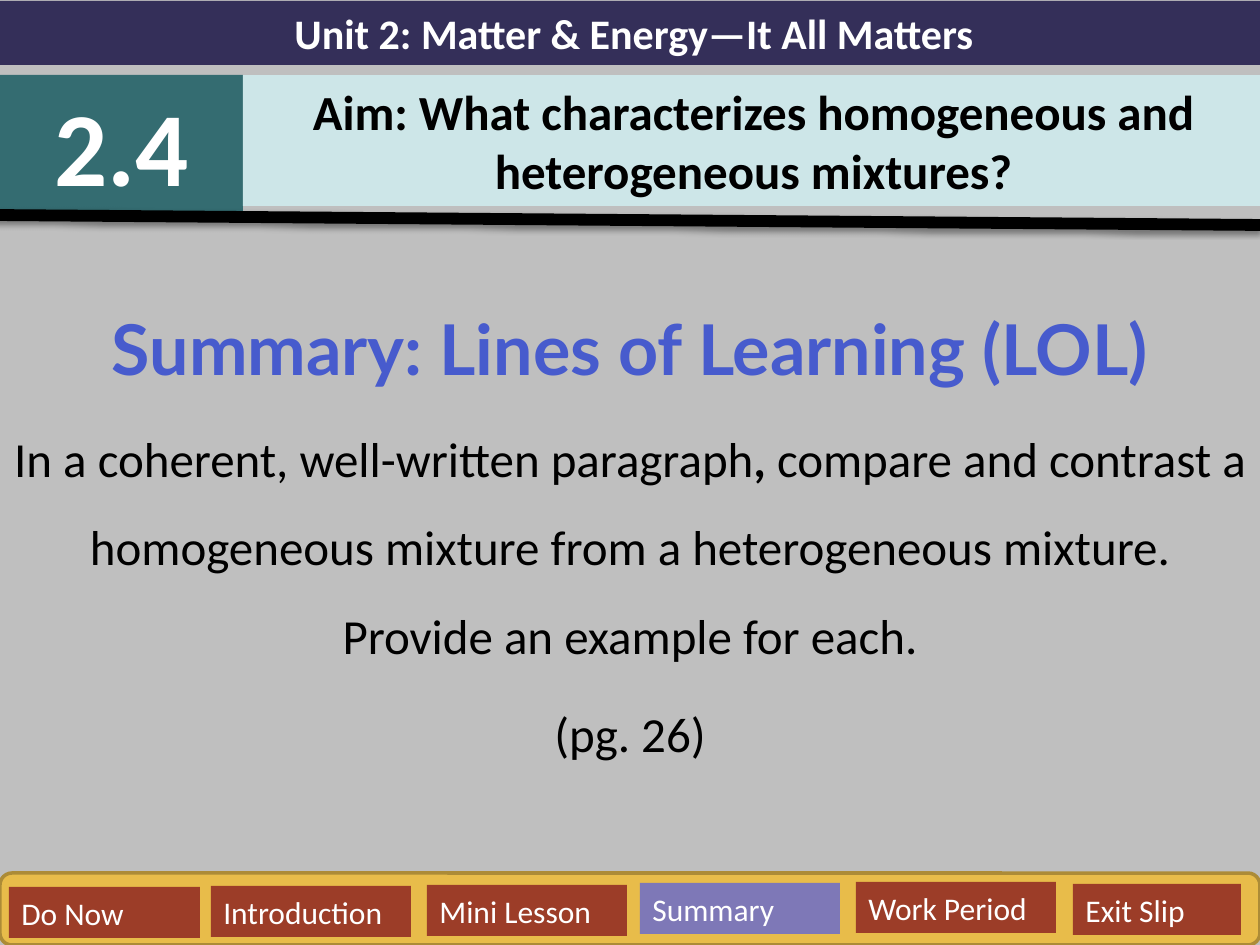
from lxml import etree
from pptx import Presentation
from pptx.dml.color import RGBColor
from pptx.enum.shapes import MSO_CONNECTOR, MSO_SHAPE
from pptx.enum.text import MSO_ANCHOR, MSO_AUTO_SIZE, PP_ALIGN
from pptx.util import Emu, Pt

RECT, ROUND = MSO_SHAPE.RECTANGLE, MSO_SHAPE.ROUNDED_RECTANGLE
LEFT, CENTER = PP_ALIGN.LEFT, PP_ALIGN.CENTER
GRAY = RGBColor(0xBF, 0xBF, 0xBF)
BLACK = RGBColor(0, 0, 0)
WHITE = RGBColor(0xFF, 0xFF, 0xFF)
BLUE = RGBColor(0x47, 0x5B, 0xCD)
NAVY = RGBColor(0x34, 0x2F, 0x59)
TEAL = RGBColor(0x34, 0x6C, 0x71)
PALE = RGBColor(0xCD, 0xE6, 0xE8)
GOLD = RGBColor(0xE8, 0xBC, 0x4A)
OCHRE = RGBColor(0xAC, 0x8B, 0x37)
VIOLET = RGBColor(0x7E, 0x78, 0xB7)
RUST = RGBColor(0x9C, 0x3D, 0x28)
SCALE = 914400 / 126


def px(*nums):
    """Turn px lengths into EMU."""
    return [Emu(round(n * SCALE)) for n in nums]


def write(para, text, size=28, color=BLACK, bold=False, font="Calibri", align=CENTER):
    para.alignment = align
    run = para.add_run()
    run.text = text
    run.font.name = font
    run.font.size = Pt(size)
    run.font.bold = bold
    run.font.color.rgb = color


prs = Presentation()
prs.slide_width, prs.slide_height = px(1260, 945)
slide = prs.slides.add_slide(prs.slide_layouts[0])
slide.background.fill.solid()
slide.background.fill.fore_color.rgb = GRAY
title = slide.shapes.title
title.element.getparent().remove(title.element)

# Task text
body = slide.placeholders[1]
body.left, body.top, body.width, body.height = px(0, 257, 1260, 627)
frame = body.text_frame
frame.auto_size = MSO_AUTO_SIZE.NONE
frame.vertical_anchor = MSO_ANCHOR.TOP
head, task, page = frame.paragraphs[0], frame.add_paragraph(), frame.add_paragraph()
for para, gap in ((head, 8), (task, 5.6), (page, 5.6)):
    para.line_spacing = 1.5
    para.space_before = Pt(gap)
write(head, "Summary: Lines of Learning (LOL)", size=40, color=BLUE, bold=True, font="Lato")
write(task, "In a coherent, well-written paragraph")
write(task, ", ", bold=True)
write(task, "compare and contrast a homogeneous mixture from a heterogeneous mixture. "
            "Provide an example for each.")
write(page, "(pg. 26)")

# Header and navigation bar; the group is filled below
nav = slide.shapes.add_group_shape()
bar = nav.shapes.add_shape(ROUND, *px(0, 873, 1260, 72))
bar.shadow.inherit = False
bar.fill.solid()
bar.fill.fore_color.rgb = GOLD
bar.line.color.rgb = OCHRE
bar.line.width = Pt(2)

top, tabs = slide.shapes, nav.shapes
big = dict(color=WHITE, bold=True)
tab = dict(size=18, color=WHITE, align=LEFT)
boxes = [
    (top, "Unit 2: Matter & Energy—It All Matters", (0, 1, 1268, 64), NAVY, dict(big, size=24)),
    (top, "2.4", (0, 75, 243, 140), TEAL, dict(big, size=60)),
    (top, "Aim: What characterizes homogeneous and heterogeneous mixtures?",
     (243, 75, 1021, 131), PALE, dict(bold=True)),
    (tabs, "Do Now", (9, 887, 191, 51), RUST, tab),
    (tabs, "Introduction", (211, 886, 200, 51), RUST, tab),
    (tabs, "Mini Lesson", (427, 885, 200, 51), RUST, tab),
    (tabs, "Summary", (640, 883, 200, 51), VIOLET, tab),
    (tabs, "Work Period", (856, 882, 200, 51), RUST, tab),
    (tabs, "Exit Slip", (1073, 884, 168, 51), RUST, tab),
]
for home, text, place, fill, style in boxes:
    box = home.add_shape(RECT, *px(*place))
    box.shadow.inherit = False
    box.fill.solid()
    box.fill.fore_color.rgb = fill
    box.line.fill.background()
    box.text_frame.word_wrap = True
    box.text_frame.auto_size = MSO_AUTO_SIZE.SHAPE_TO_FIT_TEXT
    write(box.text_frame.paragraphs[0], text, **style)

# Rule under the header, with a soft shadow
rule = slide.shapes.add_connector(MSO_CONNECTOR.STRAIGHT, *px(-6, 215, 1260, 225))
rule.line.color.rgb = BLACK
rule.line.width = Pt(6.75)
rule.element.spPr.append(etree.fromstring(
    '<a:effectLst xmlns:a="http://schemas.openxmlformats.org/drawingml/2006/main">'
    '<a:outerShdw blurRad="39370" dist="20320" dir="5400000" rotWithShape="0">'
    '<a:srgbClr val="000000"><a:alpha val="38000"/></a:srgbClr>'
    '</a:outerShdw></a:effectLst>'))

prs.save("out.pptx")
